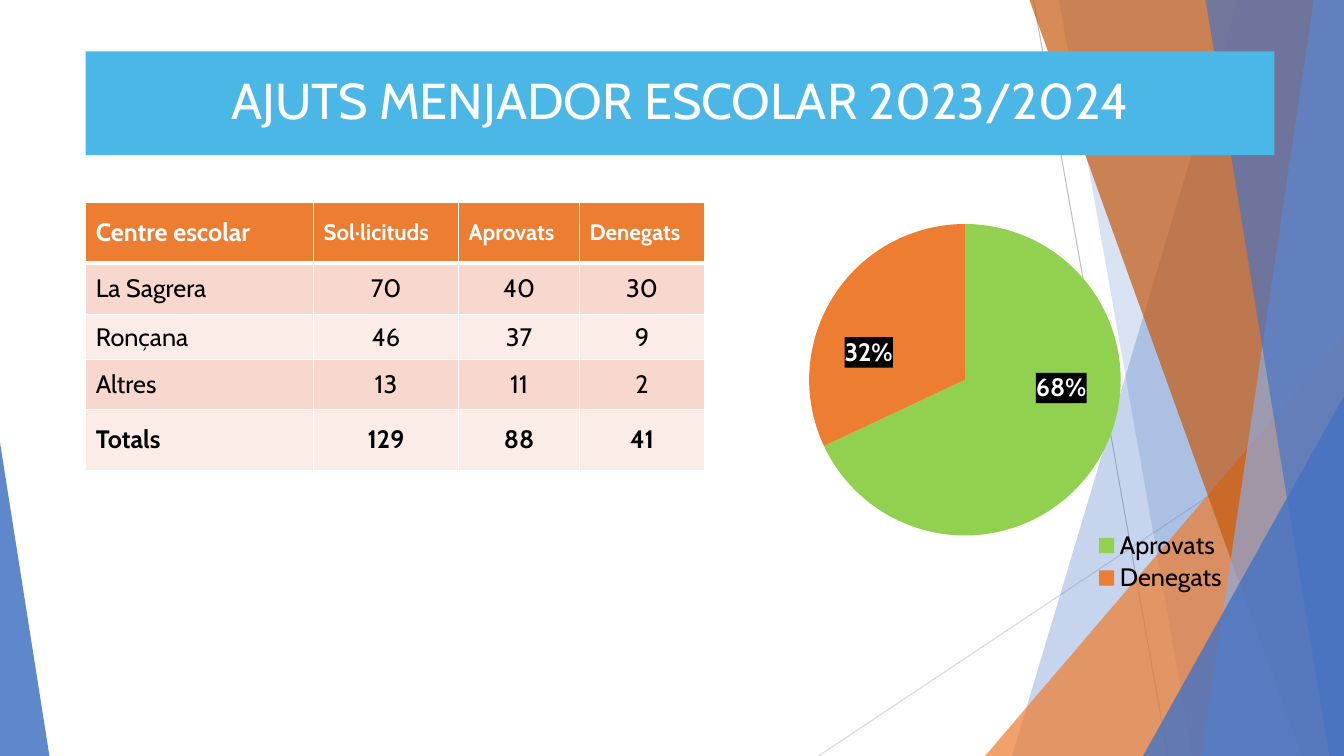
from copy import deepcopy

from pptx import Presentation
from pptx.chart.data import CategoryChartData
from pptx.dml.color import RGBColor
from pptx.enum.chart import XL_CHART_TYPE, XL_LABEL_POSITION, XL_LEGEND_POSITION
from pptx.enum.shapes import MSO_CONNECTOR, MSO_SHAPE
from pptx.enum.text import MSO_ANCHOR, MSO_AUTO_SIZE, PP_ALIGN
from pptx.oxml import parse_xml
from pptx.oxml.ns import nsdecls, qn
from pptx.util import Inches, Pt

PIE = XL_CHART_TYPE.PIE
CENTRE_LABEL = XL_LABEL_POSITION.CENTER
RIGHT_KEY = XL_LEGEND_POSITION.RIGHT
STRAIGHT = MSO_CONNECTOR.STRAIGHT
TRIANGLE = MSO_SHAPE.ISOSCELES_TRIANGLE
MIDDLE = MSO_ANCHOR.MIDDLE
NO_FIT = MSO_AUTO_SIZE.NONE
LEFT, CENTER = PP_ALIGN.LEFT, PP_ALIGN.CENTER

BLUE, SKY, PALE = "4472C4", "4BB7E7", "8FAADC"
ORANGE, RUST, GREEN = "ED7D31", "C55A11", "92D050"
WHITE, BLACK = "FFFFFF", "000000"
ROSE, BLUSH = "F8D7CE", "FCECE8"


def color(code):
    return RGBColor.from_string(code)


class Deck:
    """Style and current slide; lengths are percent of the slide's size."""

    font = "Cabin"

    def __init__(self, wide, high):
        self.prs = Presentation()
        self.prs.slide_width = Inches(wide)
        self.prs.slide_height = Inches(high)
        self.slide = self.prs.slides.add_slide(self.prs.slide_layouts[5])
        self.shapes = self.slide.shapes

    def x(self, share):
        return round(self.prs.slide_width * share / 100)

    def y(self, share):
        return round(self.prs.slide_height * share / 100)

    def box(self, left, top, wide, high):
        return self.x(left), self.y(top), self.x(wide), self.y(high)

    def style(self, font, size, code, bold=False):
        font.name, font.size, font.bold = self.font, Pt(size), bold
        font.color.rgb = color(code)

    def put(self, frame, text, size, code, align=LEFT, bold=False):
        para = frame.paragraphs[0]
        para.alignment = align
        run = para.add_run()
        run.text = text
        self.style(run.font, size, code, bold)
        return para

    def paint(self, shape, code, alpha):
        shape.shadow.inherit = False
        shape.line.fill.background()
        shape.fill.solid()
        shape.fill.fore_color.rgb = color(code)
        tone = shape._element.spPr.find(qn("a:solidFill"))[0]
        tone.append(parse_xml(f'<a:alpha {nsdecls("a")} val="{alpha * 1000}"/>'))

    def line(self, x1, y1, x2, y2, code):
        rule = self.shapes.add_connector(
            STRAIGHT, self.x(x1), self.y(y1), self.x(x2), self.y(y2))
        rule.line.color.rgb = color(code)
        rule.line.width = Pt(0.75)
        rule._element.spPr.append(parse_xml(f'<a:effectLst {nsdecls("a")}/>'))

    def band(self, top, base, code, alpha):
        """Full-height band from a slanted left edge to the slide's right side."""
        pen = self.shapes.build_freeform(self.x(top), 0)
        pen.add_line_segments([(self.x(px), self.y(py)) for px, py in
                               ((100, 0), (100, 100), (base, 100))])
        self.paint(pen.convert_to_shape(), code, alpha)

    def wedge(self, area, tip, code, alpha):
        shape = self.shapes.add_shape(TRIANGLE, *self.box(*area))
        shape.adjustments[0] = tip
        self.paint(shape, code, alpha)

    def title(self, area, text):
        bar = self.shapes.title
        bar.left, bar.top, bar.width, bar.height = self.box(*area)
        bar.fill.solid()
        bar.fill.fore_color.rgb = color(SKY)
        frame = bar.text_frame
        frame.word_wrap, frame.auto_size = True, NO_FIT
        frame.vertical_anchor = MIDDLE
        self.put(frame, text, 36, WHITE, CENTER).line_spacing = 0.9
        self.shapes._spTree.append(bar._element)  # above the bands

    def edge(self, cell, top, base):
        props = cell._tc.get_or_add_tcPr()
        for spot, (side, width) in enumerate(
                (("L", 1), ("R", 1), ("T", top), ("B", base))):
            props.insert(spot, parse_xml(
                f'<a:ln{side} {nsdecls("a")} w="{Pt(width)}"><a:solidFill>'
                f'<a:srgbClr val="{WHITE}"/></a:solidFill></a:ln{side}>'))

    def table(self, left, top, cols, rows, data):
        area = self.box(left, top, sum(cols), sum(rows))
        grid = self.shapes.add_table(len(rows), len(cols), *area).table
        for col, wide in zip(grid.columns, cols):
            col.width = self.x(wide)
        for row, high in zip(grid.rows, rows):
            row.height = self.y(high)
        last = len(rows) - 1
        for r, line in enumerate(data):
            head = r == 0
            for c, text in enumerate(line):
                cell = grid.cell(r, c)
                cell.vertical_anchor = MIDDLE
                cell.fill.solid()
                cell.fill.fore_color.rgb = color(
                    ORANGE if head else ROSE if r % 2 else BLUSH)
                self.edge(cell, 3 if r == 1 else 1, 3 if head else 1)
                self.put(cell.text_frame, text, 16 if head and c else 18,
                         WHITE if head else BLACK,
                         LEFT if head or c == 0 else CENTER, r in (0, last))

    def layout(self, inner="", **places):
        """Manual chart layout, in shares of the chart."""
        tags = "".join(f'<c:{k} val="{v}"/>' for k, v in places.items())
        return parse_xml(f'<c:layout {nsdecls("c")}><c:manualLayout>{inner}{tags}'
                         '</c:manualLayout></c:layout>')

    def pie(self, area, parts, shifts):
        data = CategoryChartData()
        data.categories = [name for name, _, _ in parts]
        data.add_series("Series 1", [value for _, value, _ in parts])
        chart = self.shapes.add_chart(PIE, *self.box(*area), data).chart
        chart.has_title = False
        self.style(chart.font, 18, BLACK)
        plot = chart.plots[0]
        plot.vary_by_categories = True
        series = plot.series[0]
        for spot, (_, _, code) in enumerate(parts):
            fill = series.points[spot].format.fill
            fill.solid()
            fill.fore_color.rgb = color(code)

        # Placement of pie and legend
        modes = '<c:xMode val="edge"/><c:yMode val="edge"/>'
        region = chart._chartSpace.chart.plotArea
        for old in region.findall(qn("c:layout")):
            region.remove(old)
        region.insert(0, self.layout('<c:layoutTarget val="inner"/>' + modes,
                                     x=0.24, y=0.14, w=0.51, h=0.66))
        chart.has_legend = True
        key = chart.legend
        key.position, key.include_in_layout = RIGHT_KEY, False
        self.style(key.font, 18, BLACK)
        for old in key._element.findall(qn("c:layout")):
            key._element.remove(old)
        key._element.find(qn("c:legendPos")).addnext(
            self.layout(modes, x=0.69, y=0.78, w=0.25, h=0.14))

        # Percent labels on black, each shifted from its slice's middle
        labels = series.data_labels
        labels.show_percentage, labels.show_value = True, False
        labels.number_format, labels.number_format_is_linked = "0%", False
        labels.position = CENTRE_LABEL
        self.style(labels.font, 18, WHITE, True)
        root = labels._element
        root.find(qn("c:numFmt")).addnext(parse_xml(
            f'<c:spPr {nsdecls("c", "a")}><a:solidFill><a:srgbClr val="{BLACK}"/>'
            '</a:solidFill></c:spPr>'))
        shared = [e for e in root if e.tag != qn("c:showLeaderLines")]
        for spot, (dx, dy) in enumerate(shifts):
            label = parse_xml(f'<c:dLbl {nsdecls("c")}><c:idx val="{spot}"/></c:dLbl>')
            label.append(self.layout(x=dx, y=dy))
            label.extend(deepcopy(shared))
            root.insert(spot, label)


def main():
    deck = Deck(13.33, 7.5)

    # Background lines, bands and wedges
    deck.line(76.9, 0, 86.9, 100, "BFBFBF")
    deck.line(100, 53.7, 60.9, 100, "D9D9D9")
    deck.band(92.1, 75.3, BLUE, 30)
    deck.band(78.8, 88.75, BLUE, 20)
    deck.wedge((73.3, 44.4, 26.7, 55.6), 1, ORANGE, 72)
    deck.band(76.6, 96.85, RUST, 70)
    deck.band(97.75, 89.4, PALE, 70)
    deck.band(89.7, 98.9, BLUE, 65)
    deck.wedge((85.05, 52.4, 14.95, 47.6), 1, BLUE, 80)
    deck.wedge((0, 58.5, 3.68, 41.5), 0, BLUE, 85)

    # Title bar
    deck.title((6.38, 6.8, 88.45, 13.73), "AJUTS MENJADOR ESCOLAR 2023/2024")

    # Grants by school
    deck.table(6.38, 26.8, (16.95, 10.8, 9, 9.3), (8, 6.8, 6, 6.53, 8.13), (
        ("Centre escolar", "Sol·licituds", "Aprovats", "Denegats"),
        ("La Sagrera", "70", "40", "30"),
        ("Ronçana", "46", "37", "9"),
        ("Altres", "13", "11", "2"),
        ("Totals", "129", "88", "41")))

    # Share of grants
    deck.pie((49.3, 20.5, 45.45, 63.3),
             (("Aprovats", 68, GREEN), ("Denegats", 32, ORANGE)),
             ((0.05, -0.07), (-0.05, 0.03)))

    deck.prs.save("out.pptx")


if __name__ == "__main__":
    main()
